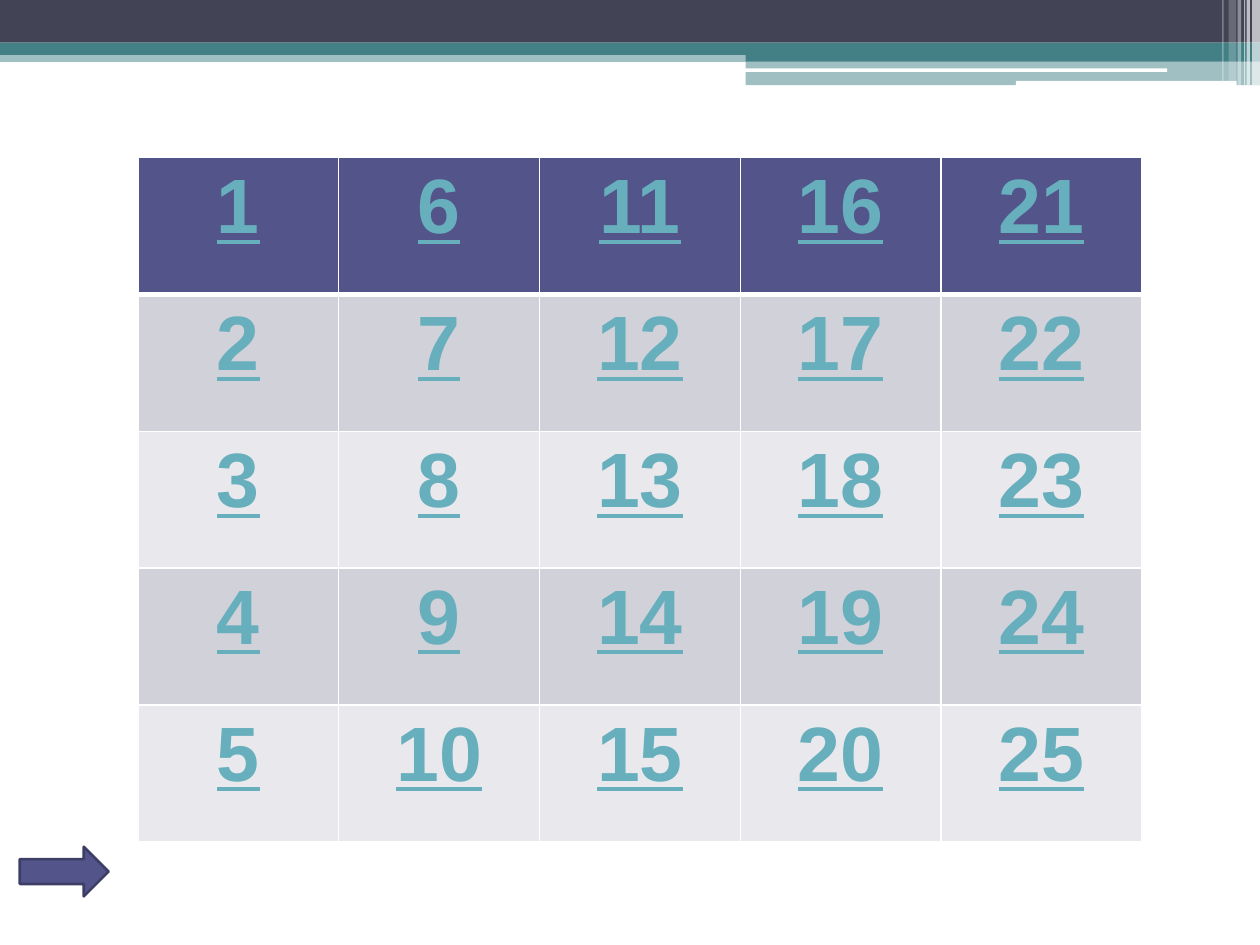
from lxml import etree
from pptx import Presentation
from pptx.dml.color import RGBColor
from pptx.enum.shapes import MSO_SHAPE
from pptx.enum.text import PP_ALIGN
from pptx.oxml.ns import qn
from pptx.util import Cm, Pt

RECT, ROUNDED, ARROW = MSO_SHAPE.RECTANGLE, MSO_SHAPE.ROUNDED_RECTANGLE, MSO_SHAPE.RIGHT_ARROW
CENTER = PP_ALIGN.CENTER
BLANK_LAYOUT = 6
COLORS = {
    "slate": "424456", "teal": "438086", "white": "FFFFFF",
    "indigo": "53548A", "arrow_edge": "3D3E66", "number": "67AFBD",
    "band_dark": "D1D1DA", "band_light": "E9E9ED",
}
SLIDE_WIDTH, SLIDE_HEIGHT = 25.4, 19.05

# left, top, width, height in cm; colour; opacity in percent
BANDS = [
    (RECT, 0, 1.02, 25.4, 0.23, "teal", 50),
    (RECT, 0, 0, 25.4, 0.86, "slate", 100),
    (RECT, 0, 0.86, 25.4, 0.25, "teal", 100),
    (RECT, 15.03, 0.99, 10.37, 0.25, "teal", 100),
    (RECT, 15.03, 1.24, 10.37, 0.48, "teal", 50),
    (ROUNDED, 15.01, 1.38, 8.52, 0.07, "white", 100),
    (ROUNDED, 20.48, 1.63, 4.45, 0.1, "white", 100),
]
# left, width, height in cm; opacity in percent
STRIPES = [
    (25.24, 0.16, 1.72, 65), (25.13, 0.07, 1.72, 65), (25.08, 0.02, 1.72, 60),
    (24.95, 0.07, 1.72, 40), (24.77, 0.15, 1.63, 20), (24.64, 0.03, 1.63, 30),
]


def rgb(name):
    return RGBColor.from_string(COLORS[name])


def add_filled(slide, preset, left, top, width, height, color, opacity=100):
    shape = slide.shapes.add_shape(preset, Cm(left), Cm(top), Cm(width), Cm(height))
    shape.shadow.inherit = False
    shape.fill.solid()
    shape.fill.fore_color.rgb = rgb(color)
    shape.line.fill.background()
    if opacity < 100:
        srgb = shape.fill._xPr.find(qn("a:solidFill")).find(qn("a:srgbClr"))
        etree.SubElement(srgb, qn("a:alpha"), val=str(opacity * 1000))
    return shape


def add_header(slide, left, top):
    for preset, x, y, width, height, color, opacity in BANDS:
        add_filled(slide, preset, left + x, top + y, width, height, color, opacity)
    for x, width, height, opacity in STRIPES:
        add_filled(slide, RECT, left + x, top, width, height, "white", opacity)


def set_borders(cell, widths):
    """Draw white borders; widths maps each side's tag to points."""
    props = cell._tc.get_or_add_tcPr()
    for side, points in widths.items():
        line = etree.SubElement(props, qn(f"a:{side}"), w=str(Pt(points)))
        fill = etree.SubElement(line, qn("a:solidFill"))
        etree.SubElement(fill, qn("a:srgbClr"), val=COLORS["white"])


def add_number_grid(slide, left, top, width, height, size=5):
    """Number the cells down each column in turn."""
    grid = slide.shapes.add_table(size, size, Cm(left), Cm(top), Cm(width), Cm(height)).table
    for column in grid.columns:
        column.width = Cm(width / size)
    for row in range(size):
        grid.rows[row].height = Cm(height / size)
        band = "indigo" if row == 0 else "band_dark" if row % 2 else "band_light"
        for col in range(size):
            cell = grid.cell(row, col)
            set_borders(cell, {"lnL": 1, "lnR": 1,
                               "lnT": 3 if row == 1 else 1,
                               "lnB": 3 if row == 0 else 1})
            cell.fill.solid()
            cell.fill.fore_color.rgb = rgb(band)
            paragraph = cell.text_frame.paragraphs[0]
            paragraph.alignment = CENTER
            number = paragraph.add_run()
            number.text = str(col * size + row + 1)
            font = number.font
            font.name, font.size = "Arial", Pt(44)
            font.bold = font.underline = True
            font.color.rgb = rgb("number")


def add_next_arrow(slide, left, top, width, height):
    arrow = add_filled(slide, ARROW, left, top, width, height, "indigo")
    arrow.line.color.rgb = rgb("arrow_edge")
    arrow.line.width = Pt(1.5)


def main():
    deck = Presentation()
    deck.slide_width, deck.slide_height = Cm(SLIDE_WIDTH), Cm(SLIDE_HEIGHT)
    slide = deck.slides.add_slide(deck.slide_layouts[BLANK_LAYOUT])
    add_header(slide, 0, 0)
    add_number_grid(slide, 2.78, 3.18, 20.24, 13.79)
    add_next_arrow(slide, 0.4, 17.07, 1.79, 1)
    deck.save("out.pptx")


if __name__ == "__main__":
    main()
